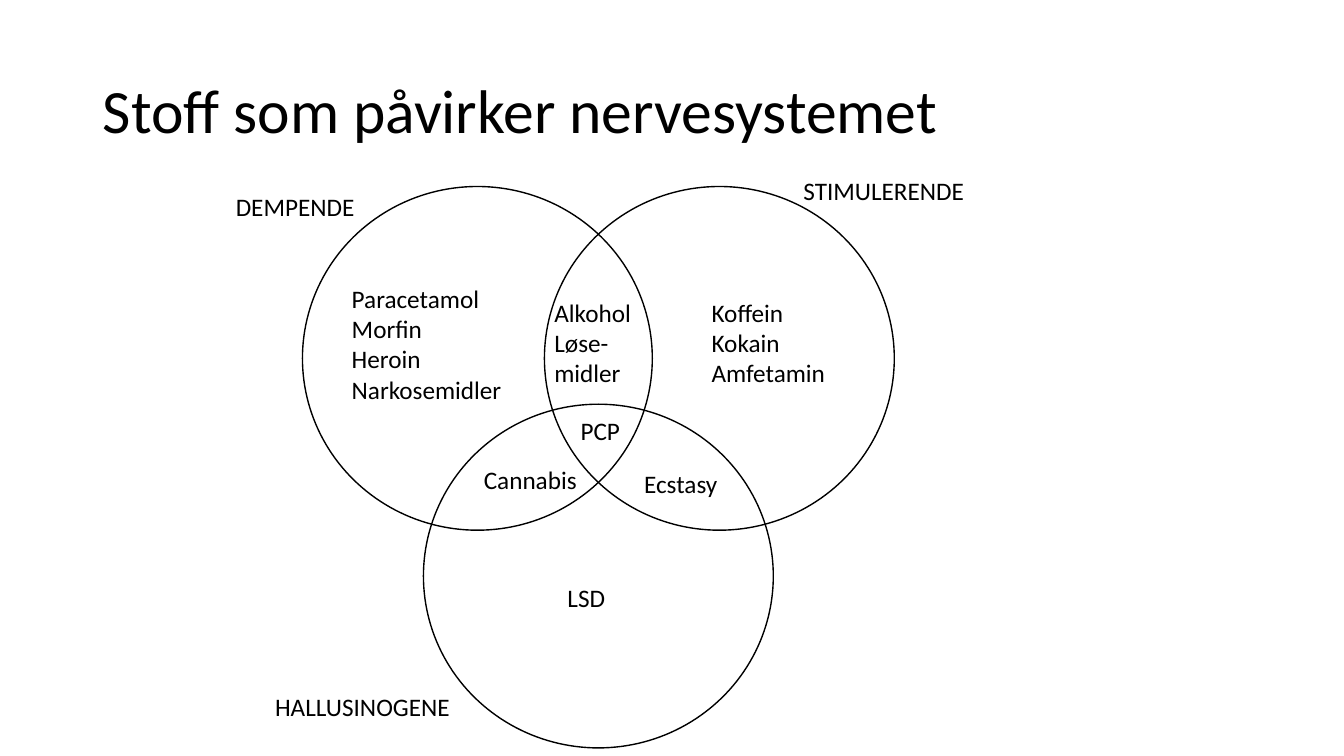
from pptx import Presentation
from pptx.dml.color import RGBColor
from pptx.enum.shapes import MSO_SHAPE
from pptx.enum.text import MSO_ANCHOR, MSO_AUTO_SIZE, PP_ALIGN
from pptx.util import Inches, Pt

BLACK = RGBColor(0, 0, 0)
FONT = "Calibri"

deck = Presentation()
deck.slide_width = Inches(13.33)
deck.slide_height = Inches(7.5)
slide = deck.slides.add_slide(deck.slide_layouts[5])


def write(frame, text, size=18, anchor=MSO_ANCHOR.TOP, spacing=1.0,
          fit=MSO_AUTO_SIZE.SHAPE_TO_FIT_TEXT):
    frame.text = text
    frame.word_wrap = True
    frame.auto_size = fit
    frame.vertical_anchor = anchor
    for line in frame.paragraphs:
        line.alignment = PP_ALIGN.LEFT
        line.line_spacing = spacing
        line.font.size = Pt(size)
        line.font.name = FONT
        line.font.color.rgb = BLACK


# Title
title = slide.shapes.title
title.left, title.top = Inches(0.92), Inches(0.4)
title.width, title.height = Inches(11.5), Inches(1.45)
write(title.text_frame, "Stoff som påvirker nervesystemet", size=44,
      anchor=MSO_ANCHOR.MIDDLE, spacing=0.9, fit=MSO_AUTO_SIZE.NONE)

# Three overlapping circles, the middle one lower
for step, top in enumerate((1.85, 4.01, 1.85)):
    ring = slide.shapes.add_shape(
        MSO_SHAPE.OVAL, Inches(3 + 1.2 * step), Inches(top),
        Inches(3.47), Inches(3.41))
    ring.shadow.inherit = False
    ring.fill.background()
    ring.line.color.rgb = BLACK
    ring.line.width = Pt(1)

# Substances in each region, then the group names outside
labels = [
    ("Paracetamol\nMorfin\nHeroin\nNarkosemidler", 3.39, 2.76, 2.02, 1.31),
    ("Alkohol\nLøse-midler", 5.4, 2.9, 1.2, 1.01),
    ("Koffein\nKokain\nAmfetamin", 6.96, 2.9, 1.43, 1.01),
    ("LSD", 5.53, 5.73, 1.21, 0.4),
    ("PCP", 5.66, 4.07, 0.63, 0.4),
    ("Ecstasy", 6.29, 4.6, 1.01, 0.4),
    ("Cannabis", 4.7, 4.56, 1.21, 0.4),
    ("DEMPENDE", 2.24, 1.85, 2.17, 0.4),
    ("STIMULERENDE", 7.87, 1.69, 2.13, 0.4),
    ("HALLUSINOGENE", 2.63, 6.81, 2.56, 0.4),
]
for text, left, top, width, height in labels:
    box = slide.shapes.add_textbox(
        Inches(left), Inches(top), Inches(width), Inches(height))
    write(box.text_frame, text)

deck.save("out.pptx")
